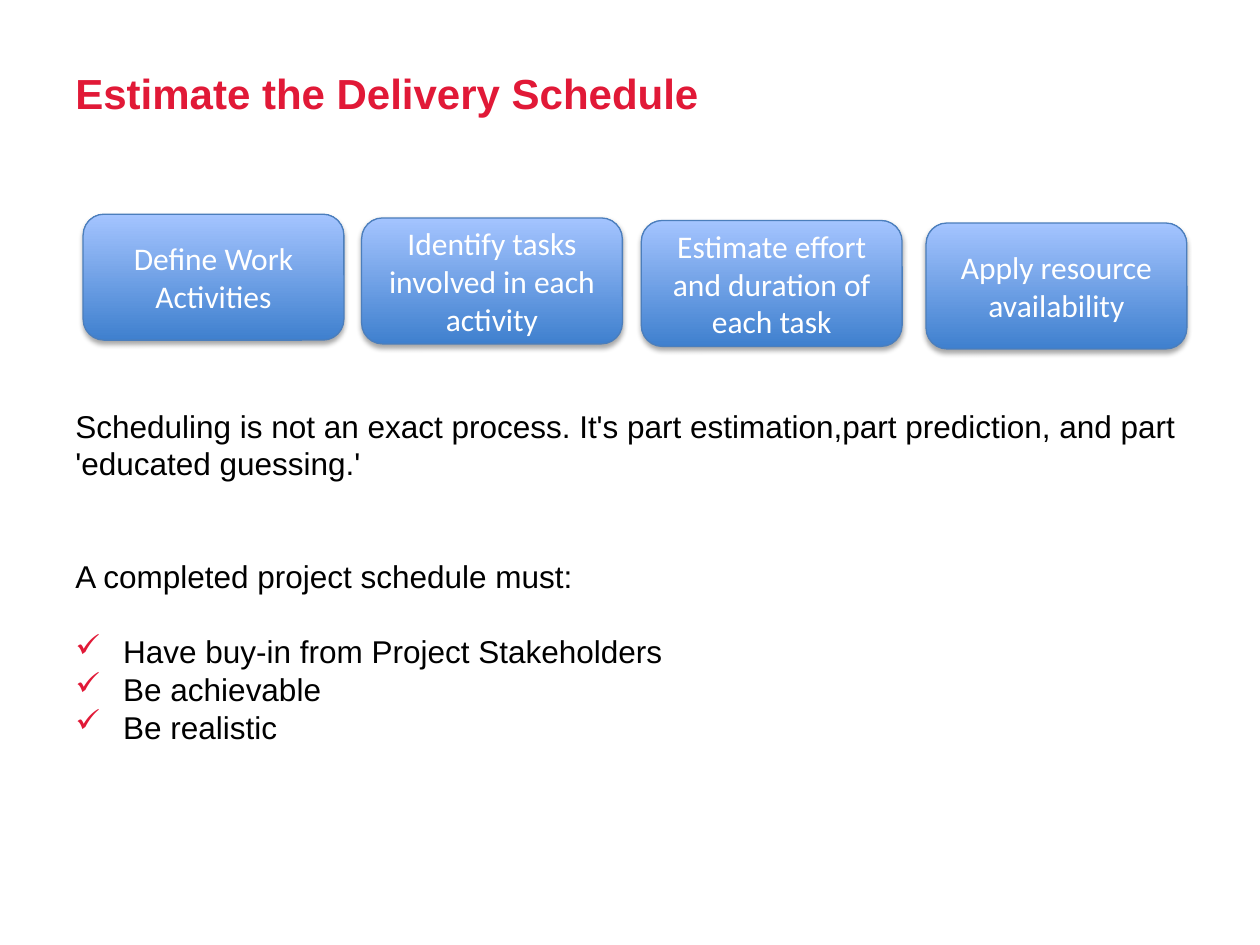
from lxml import etree
from pptx import Presentation
from pptx.dml.color import RGBColor
from pptx.enum import shapes, text
from pptx.oxml import ns
from pptx.util import Inches, Pt

RED = RGBColor(0xE1, 0x19, 0x37)
BLACK = RGBColor(0, 0, 0)
WHITE = RGBColor(255, 255, 255)
DEEP = RGBColor(0x3F, 0x80, 0xCE)
PALE = RGBColor(0xA4, 0xC4, 0xFF)
EDGE = RGBColor(0x4B, 0x7E, 0xBC)

STEPS = [
    (0.66, 1.7, "Define Work Activities"),
    (2.87, 1.73, "Identify tasks involved in each activity"),
    (5.09, 1.75, "Estimate effort and duration of each task"),
    (7.35, 1.77, "Apply resource availability"),
]
LINE = 21.5
BODY = [
    ("Scheduling is not an exact process. It's part estimation,part prediction, "
     "and part 'educated guessing.'", 0, False),
    ("A completed project schedule must:", 2, False),
    ("Have buy-in from Project Stakeholders", 1, True),
    ("Be achievable", 0, True),
    ("Be realistic", 0, True),
]


def add(parent, tag, **attrs):
    return etree.SubElement(parent, ns.qn(tag), attrs)


def style(para, **looks):
    color = looks.pop("color")
    for key, value in looks.items():
        setattr(para.font, key, value)
    para.font.color.rgb = color


def frame(slide, box):
    area = slide.shapes.add_textbox(*map(Inches, box)).text_frame
    area.word_wrap = True
    return area


def title(slide, box):
    area = frame(slide, box)
    area.vertical_anchor = text.MSO_ANCHOR.MIDDLE
    area.margin_bottom = Inches(0.43)
    para = area.paragraphs[0]
    para.text = "Estimate the Delivery Schedule"
    style(para, name="Arial", size=Pt(24), bold=True, color=RED)


def check(para):
    props = para._p.get_or_add_pPr()
    props.set("marL", str(Inches(0.38)))
    props.set("indent", str(Inches(-0.38)))
    add(add(props, "a:buClr"), "a:srgbClr", val=str(RED))
    add(props, "a:buChar", char="✓")


def body(slide, box):
    area = frame(slide, box)
    for i, (words, gap, tick) in enumerate(BODY):
        para = area.add_paragraph() if i else area.paragraphs[0]
        para.text = words
        para.line_spacing = Pt(LINE)
        if gap:
            para.space_before = Pt(gap * LINE)
        if tick:
            check(para)
        style(para, name="Arial", size=Pt(18), color=BLACK)


def shade(shape):
    effects = add(shape._element.spPr, "a:effectLst")
    shadow = add(effects, "a:outerShdw", blurRad=str(Pt(3.1)), dist=str(Pt(1.8)),
                 dir="5400000", rotWithShape="0")
    add(add(shadow, "a:srgbClr", val=str(BLACK)), "a:alpha", val="35000")


def step(slide, box, words):
    shape = slide.shapes.add_shape(
        shapes.MSO_SHAPE.ROUNDED_RECTANGLE, *map(Inches, box))
    shape.fill.gradient()
    shape.fill.gradient_angle = 90
    for stop, color in zip(shape.fill.gradient_stops, (DEEP, PALE)):
        stop.color.rgb = color
    shape.line.color.rgb = EDGE
    shape.line.width = Pt(0.75)
    shade(shape)
    area = shape.text_frame
    area.word_wrap = True
    area.vertical_anchor = text.MSO_ANCHOR.MIDDLE
    para = area.paragraphs[0]
    para.text = words
    para.alignment = text.PP_ALIGN.CENTER
    style(para, name="Calibri", size=Pt(18), color=WHITE)


def main():
    deck = Presentation()
    deck.slide_width, deck.slide_height = Inches(10), Inches(7.5)
    slide = deck.slides.add_slide(deck.slide_layouts[6])
    title(slide, (0.5, 0.3, 9, 1.25))
    body(slide, (0.5, 3.18, 9, 2.82))
    for left, top, words in STEPS:
        step(slide, (left, top, 2.07, 1), words)
    deck.save("out.pptx")


if __name__ == "__main__":
    main()
